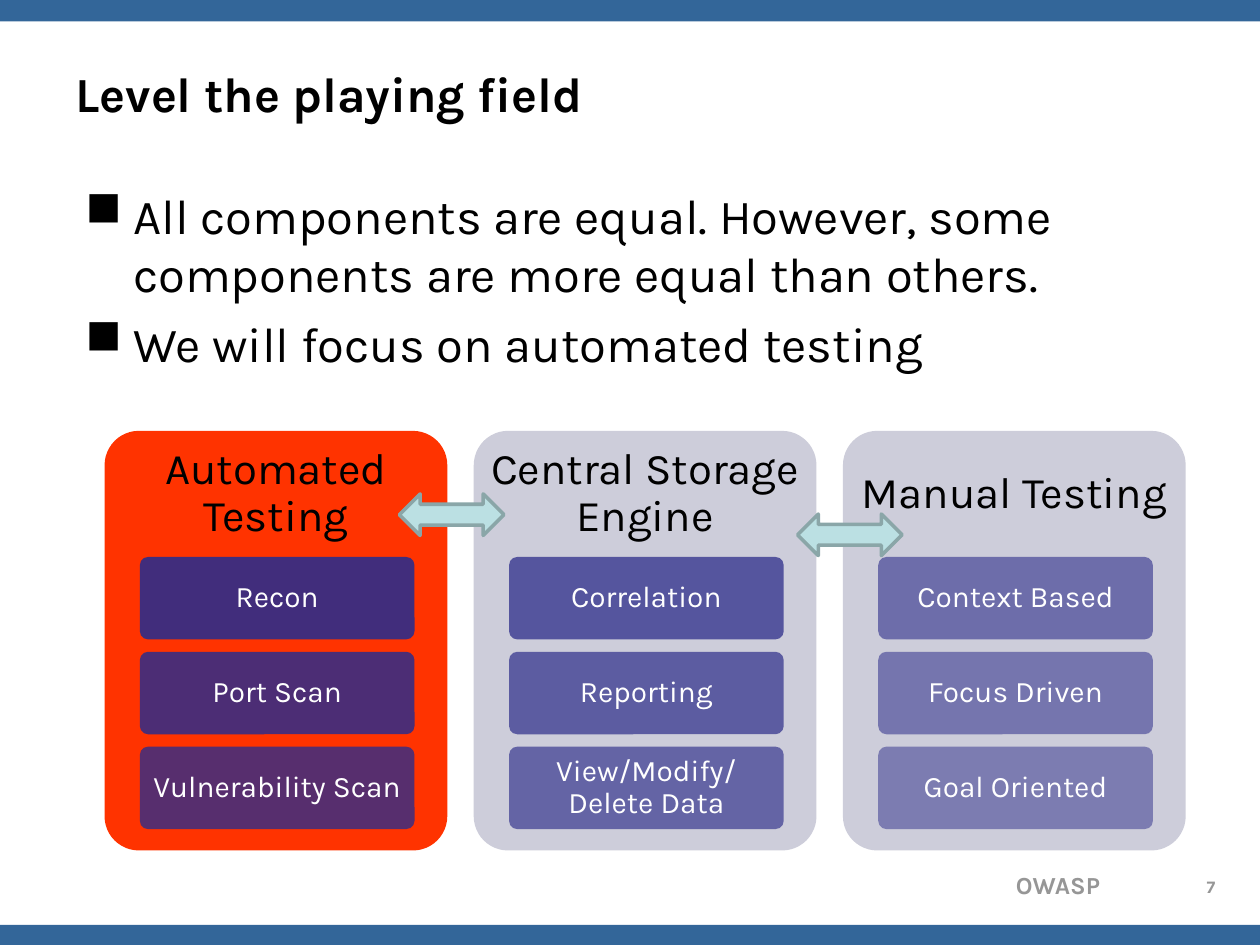
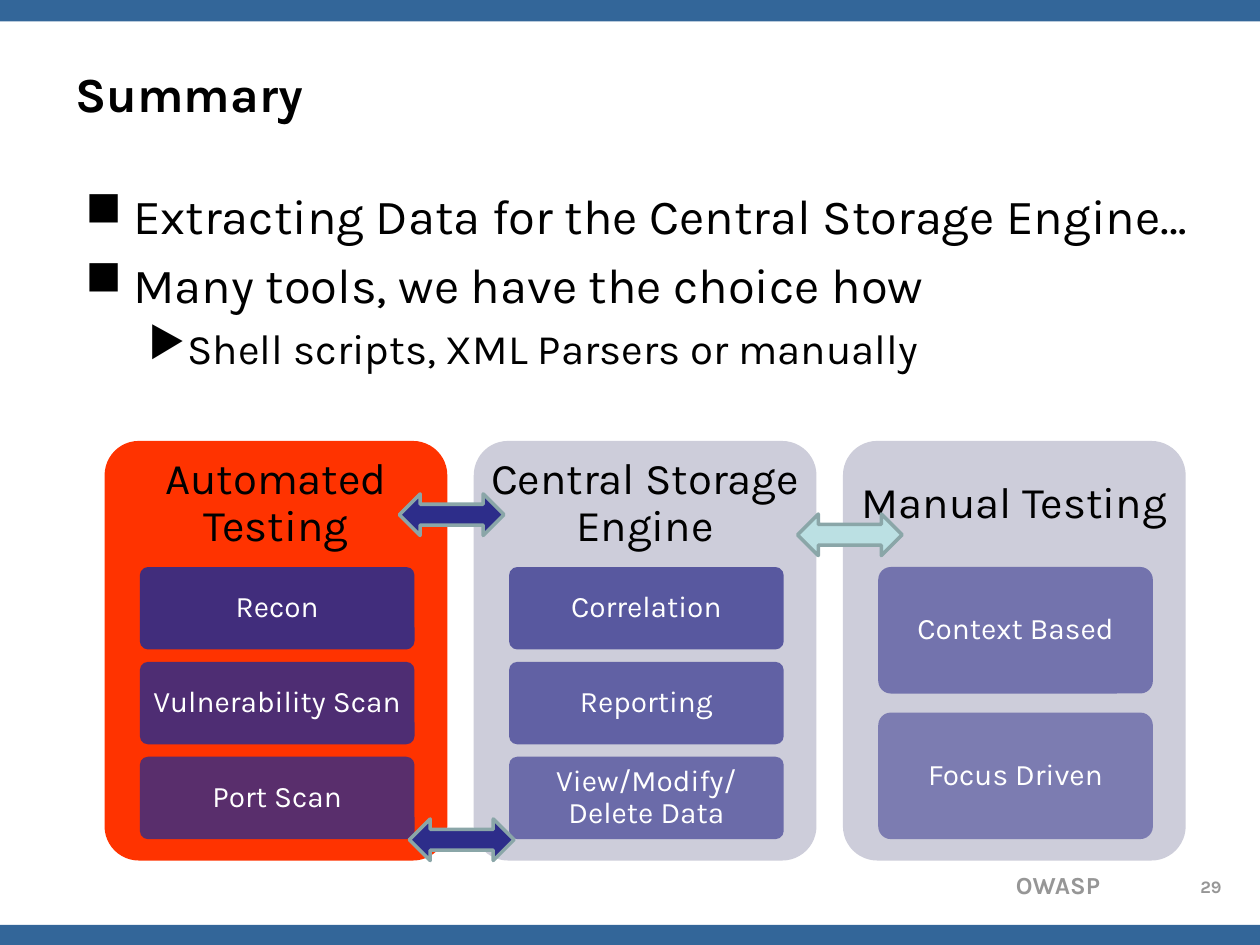
from dataclasses import dataclass

from lxml import etree
from pptx import Presentation
from pptx.dml.color import RGBColor
from pptx.enum.shapes import MSO_SHAPE
from pptx.enum.text import MSO_ANCHOR, MSO_AUTO_SIZE, PP_ALIGN
from pptx.oxml.ns import qn
from pptx.util import Inches, Pt

RECT = MSO_SHAPE.RECTANGLE
ROUNDED = MSO_SHAPE.ROUNDED_RECTANGLE
DOUBLE_ARROW = MSO_SHAPE.LEFT_RIGHT_ARROW
TOP, MIDDLE = MSO_ANCHOR.TOP, MSO_ANCHOR.MIDDLE
LEFT, CENTER, RIGHT = PP_ALIGN.LEFT, PP_ALIGN.CENTER, PP_ALIGN.RIGHT
NO_AUTOFIT = MSO_AUTO_SIZE.NONE

FONT = "Karla"
BLACK, WHITE, GREY = "000000", "FFFFFF", "969696"
BAND_BLUE, INDIGO = "336699", "2D2D8A"
RED, PALE = "FF3300", "CDCDDA"
AQUA, ARROW_EDGE = "BBE0E3", "8AA6A8"

# Component diagram measures, in inches
PANEL_LEFT, PANEL_PITCH = 0.83, 2.93
PANEL_WIDTH, PANEL_HEIGHT = 2.72, 3.33
HEADING_HEIGHT = 1.0
STEP_INDENT, STEP_WIDTH, STEPS_HEIGHT = 0.28, 2.18, 2.16
GAP_RATIO = 0.15  # gap between steps, relative to step height


@dataclass(frozen=True)
class BulletLevel:
    mark: str
    size: int
    margin: float
    hanging: float
    space_before: int


LEVELS = (BulletLevel("■", 28, 0.38, 0.38, 6), BulletLevel("▶", 24, 0.81, 0.31, 5))


@dataclass(frozen=True)
class Bullet:
    text: str
    level: int = 0


@dataclass(frozen=True)
class Component:
    heading: str
    steps: tuple[str, ...]
    fill: str = PALE


@dataclass(frozen=True)
class Link:
    left: float
    top: float
    fill: str = AQUA


@dataclass(frozen=True)
class Page:
    title: str
    number: int
    bullets: tuple[Bullet, ...]
    body_width: float
    diagram_top: float
    components: tuple[Component, ...]
    links: tuple[Link, ...]


STORAGE = Component("Central Storage Engine",
                    ("Correlation", "Reporting", "View/Modify/Delete Data"))

PAGES = (
    Page(
        "Level the playing field", 7,
        (Bullet("All components are equal. However, some components "
                "are more equal than others."),
         Bullet("We will focus on automated testing")),
        9.0, 3.42,
        (Component("Automated Testing",
                   ("Recon", "Port Scan", "Vulnerability Scan"), RED),
         STORAGE,
         Component("Manual Testing",
                   ("Context Based", "Focus Driven", "Goal Oriented"))),
        (Link(3.17, 3.92), Link(6.33, 4.08)),
    ),
    Page(
        "Summary", 29,
        (Bullet("Extracting Data for the Central Storage Engine…"),
         Bullet("Many tools, we have the choice how"),
         Bullet("Shell scripts, XML Parsers or manually", 1)),
        9.42, 3.5,
        (Component("Automated Testing",
                   ("Recon", "Vulnerability Scan", "Port Scan"), RED),
         STORAGE,
         Component("Manual Testing", ("Context Based", "Focus Driven"))),
        (Link(3.17, 3.92, INDIGO), Link(6.33, 4.08), Link(3.25, 6.5, INDIGO)),
    ),
)


def rgb(color: str) -> RGBColor:
    return RGBColor.from_string(color)


def set_font(paragraph, size: float, color: str, bold: bool = False) -> None:
    font = paragraph.font
    font.name, font.size, font.bold = FONT, Pt(size), bold
    font.color.rgb = rgb(color)


def set_text(shape, text: str, size: float, color: str, align=CENTER,
             bold: bool = False, line_spacing: float = 1.0):
    frame = shape.text_frame
    frame.word_wrap = True
    frame.auto_size = NO_AUTOFIT
    frame.text = text
    paragraph = frame.paragraphs[0]
    paragraph.alignment = align
    paragraph.line_spacing = line_spacing
    set_font(paragraph, size, color, bold)
    return frame


def add_box(slide, kind, left: float, top: float, width: float, height: float,
            fill: str, opacity: float = 100):
    box = slide.shapes.add_shape(kind, Inches(left), Inches(top),
                                 Inches(width), Inches(height))
    box.shadow.inherit = False
    box.fill.solid()
    box.fill.fore_color.rgb = rgb(fill)
    box.line.fill.background()
    if kind == ROUNDED:
        box.adjustments[0] = 0.1
    if opacity < 100:
        color = box.fill._xPr.find(qn("a:solidFill"))[0]
        etree.SubElement(color, qn("a:alpha"), val=str(round(opacity) * 1000))
    return box


def add_label(slide, left: float, top: float, width: float, height: float):
    return slide.shapes.add_textbox(Inches(left), Inches(top),
                                    Inches(width), Inches(height))


def add_frame(slide, page: Page) -> None:
    # Bands, title and footer
    for top in (0, 7.34):
        add_box(slide, RECT, 0, top, 10, 0.17, BAND_BLUE)
    title = slide.shapes.title
    title.left, title.top = Inches(0.5), Inches(0.3)
    title.width, title.height = Inches(9), Inches(0.87)
    set_text(title, page.title, 28, BLACK, LEFT, True).vertical_anchor = MIDDLE
    set_text(add_label(slide, 6.22, 6.86, 2.61, 0.33), "OWASP", 14, GREY, RIGHT, True)
    set_text(add_label(slide, 9.39, 6.9, 0.44, 0.25), str(page.number), 10, GREY,
             bold=True)


def add_bullets(slide, bullets: tuple[Bullet, ...], width: float) -> None:
    frame = add_label(slide, 0.58, 1.42, width, 5.28).text_frame
    frame.word_wrap = True
    frame.vertical_anchor = TOP
    for index, bullet in enumerate(bullets):
        level = LEVELS[bullet.level]
        paragraph = frame.add_paragraph() if index else frame.paragraphs[0]
        paragraph.text = bullet.text
        paragraph.level = bullet.level
        if index:
            paragraph.space_before = Pt(level.space_before)
        properties = paragraph._p.get_or_add_pPr()
        properties.set("marL", str(Inches(level.margin)))
        properties.set("indent", str(-Inches(level.hanging)))
        etree.SubElement(properties, qn("a:buChar"), char=level.mark)
        set_font(paragraph, level.size, BLACK)


def add_step(slide, text: str, left: float, top: float, height: float,
             opacity: float) -> None:
    step = add_box(slide, ROUNDED, left, top, STEP_WIDTH, height, INDIGO, opacity)
    frame = set_text(step, text, 17, WHITE, line_spacing=0.9)
    frame.vertical_anchor = MIDDLE
    frame.margin_left = frame.margin_right = Inches(0.03)
    frame.margin_top = frame.margin_bottom = Inches(0.02)


def add_components(slide, components: tuple[Component, ...], top: float) -> None:
    # Steps fade evenly from 90 % to 50 % across the whole diagram
    fade = 40 / (sum(len(component.steps) for component in components) - 1)
    opacity = 90.0
    for column, component in enumerate(components):
        left = PANEL_LEFT + column * PANEL_PITCH
        add_box(slide, ROUNDED, left, top, PANEL_WIDTH, PANEL_HEIGHT, component.fill)
        heading = add_label(slide, left, top, PANEL_WIDTH, HEADING_HEIGHT)
        set_text(heading, component.heading, 25, BLACK,
                 line_spacing=0.9).vertical_anchor = MIDDLE

        count = len(component.steps)
        height = STEPS_HEIGHT / (count + (count - 1) * GAP_RATIO)
        for row, step in enumerate(component.steps):
            step_top = top + HEADING_HEIGHT + row * height * (1 + GAP_RATIO)
            add_step(slide, step, left + STEP_INDENT, step_top, height, opacity)
            opacity -= fade


def add_links(slide, links: tuple[Link, ...]) -> None:
    for link in links:
        arrow = add_box(slide, DOUBLE_ARROW, link.left, link.top, 0.83, 0.33, link.fill)
        arrow.line.color.rgb = rgb(ARROW_EDGE)
        arrow.line.width = Pt(2)


def main() -> None:
    deck = Presentation()
    deck.slide_width, deck.slide_height = Inches(10), Inches(7.5)
    title_only = deck.slide_layouts[5]
    for page in PAGES:
        slide = deck.slides.add_slide(title_only)
        add_frame(slide, page)
        add_bullets(slide, page.bullets, page.body_width)
        add_components(slide, page.components, page.diagram_top)
        add_links(slide, page.links)
    deck.save("out.pptx")


if __name__ == "__main__":
    main()
